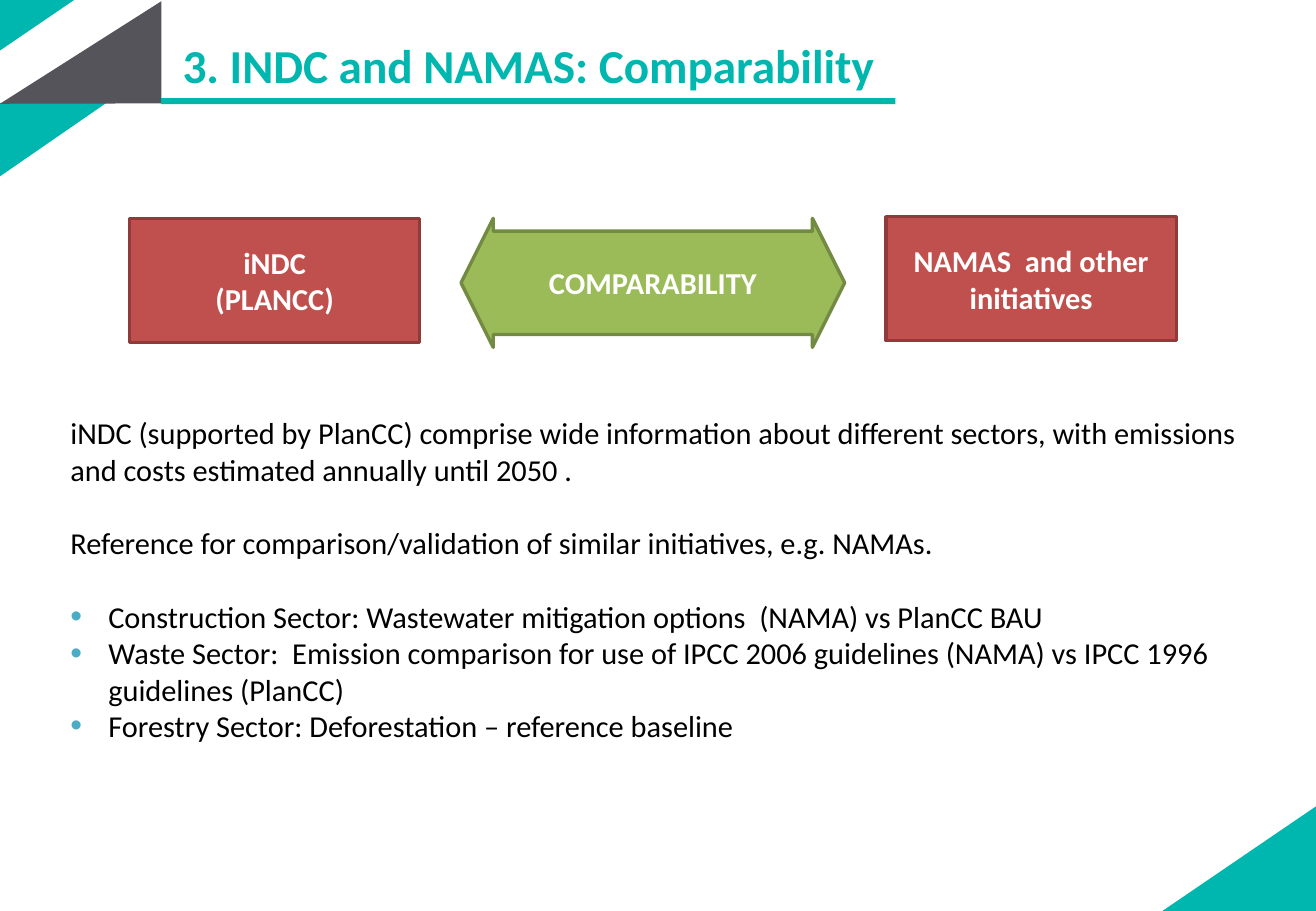
from lxml.etree import SubElement
from pptx import Presentation
from pptx.dml.color import RGBColor
from pptx.enum.shapes import MSO_SHAPE as Kind
from pptx.enum.text import MSO_ANCHOR as Anchor, MSO_AUTO_SIZE as Fit, PP_ALIGN as Align
from pptx.oxml.ns import qn
from pptx.util import Pt

TEAL = RGBColor(0x00, 0xB7, 0xAF)
SLATE = RGBColor(0x56, 0x54, 0x5B)
RED = RGBColor(0xC0, 0x50, 0x4D)
MAROON = RGBColor(0x8E, 0x3B, 0x39)
GREEN = RGBColor(0x9B, 0xBB, 0x59)
OLIVE = RGBColor(0x73, 0x8A, 0x42)
BLUE = RGBColor(0x4B, 0xAC, 0xC6)
WHITE = RGBColor(0xFF, 0xFF, 0xFF)
BLACK = RGBColor(0x00, 0x00, 0x00)

FONT = "Calibri"
WIDE, HIGH = 780, 540


def place(shape, box):
    shape.left, shape.top, shape.width, shape.height = map(Pt, box)


def write(para, text, size, color, bold=False):
    run = para.add_run()
    run.text = text
    font = run.font
    font.name, font.size, font.bold = FONT, Pt(size), bold
    font.color.rgb = color


def paint(shape, fill, edge=None):
    shape.shadow.inherit = False
    shape.fill.solid()
    shape.fill.fore_color.rgb = fill
    if edge is None:
        shape.line.fill.background()
    else:
        shape.line.color.rgb = edge
        shape.line.width = Pt(2)


def wedge(slide, points, fill):
    spots = [(Pt(x), Pt(y)) for x, y in points]
    build = slide.shapes.build_freeform(*spots[0])
    build.add_line_segments(spots[1:], close=True)
    paint(build.convert_to_shape(), fill)


def add_decor(slide, box):
    """Corner triangles, measured from the edges of the box."""
    x, y, w, h = box
    right, base = x + w, y + h
    wedge(slide, [(x, y), (x + 44, y), (x, y + 30)], TEAL)
    wedge(slide, [(x, y + 61), (x + 63, y + 61), (x, y + 104.5)], TEAL)
    wedge(slide, [(right, base - 62), (right, base), (right - 91, base)], TEAL)
    wedge(slide, [(x + 95.7, y + 0.7), (x + 95.7, y + 61.3), (x, y + 61.5)], SLATE)


def add_head(slide, box):
    """Title with a rule below it."""
    x, y, w, h = box
    bar = slide.shapes.add_shape(
        Kind.RECTANGLE, Pt(x - 5.5), Pt(y + h - 0.8), Pt(w + 6.3), Pt(3.6))
    paint(bar, TEAL)

    title = slide.shapes.title
    place(title, box)
    frame = title.text_frame
    frame.word_wrap = False
    frame.auto_size = Fit.NONE
    frame.vertical_anchor = Anchor.TOP
    para = frame.paragraphs[0]
    para.alignment = Align.LEFT
    write(para, "3. INDC and NAMAS: Comparability", 28, TEAL, True)


def add_block(slide, kind, box, fill, edge, lines):
    shape = slide.shapes.add_shape(kind, *map(Pt, box))
    paint(shape, fill, edge)
    frame = shape.text_frame
    frame.word_wrap = True
    frame.vertical_anchor = Anchor.MIDDLE
    for i, text in enumerate(lines):
        para = frame.add_paragraph() if i else frame.paragraphs[0]
        para.alignment = Align.CENTER
        write(para, text, 18, WHITE, True)
    return shape


def add_flow(slide, box):
    """Two red boxes with a double arrow between them."""
    x, y, w, h = box
    side, gap = 172, 24.5
    add_block(slide, Kind.RECTANGLE, (x, y + 1, side, h), RED, MAROON,
              ["iNDC", "(PLANCC)"])
    add_block(slide, Kind.RECTANGLE, (x + w - side, y, side, h), RED, MAROON,
              ["NAMAS  and other initiatives"])
    span = w - 2 * (side + gap)
    arrow = add_block(slide, Kind.LEFT_RIGHT_ARROW,
                      (x + side + gap, y + 1, span, h + 3), GREEN, OLIVE,
                      ["COMPARABILITY"])
    arrow.adjustments[0] = 0.8
    arrow.adjustments[1] = 0.25


def set_mark(para, dot):
    """Turn the bullet on or off, with its indent."""
    props = para._p.get_or_add_pPr()
    indent = Pt(22.5) if dot else 0
    props.set("marL", str(indent))
    props.set("indent", str(-indent))
    if not dot:
        SubElement(props, qn("a:buNone"))
        return
    color = SubElement(props, qn("a:buClr"))
    SubElement(color, qn("a:srgbClr")).set("val", str(BLUE))
    SubElement(props, qn("a:buSzPct")).set("val", "110000")
    SubElement(props, qn("a:buFont")).set("typeface", "Arial")
    SubElement(props, qn("a:buChar")).set("char", "•")


def add_body(slide, box):
    """Two statements, then the sector list."""
    items = [
        (False, "iNDC (supported by PlanCC) comprise wide information about different "
                "sectors, with emissions and costs estimated annually until 2050 ."),
        (False, "Reference for comparison/validation of similar initiatives, e.g. NAMAs."),
        (True, "Construction Sector: Wastewater mitigation options  (NAMA) vs PlanCC BAU"),
        (True, "Waste Sector:  Emission comparison for use of IPCC 2006 guidelines "
               "(NAMA) vs IPCC 1996 guidelines (PlanCC)"),
        (True, "Forestry Sector: Deforestation – reference baseline"),
    ]
    body = slide.placeholders[1]
    place(body, box)
    frame = body.text_frame
    frame.word_wrap = True
    frame.auto_size = Fit.NONE
    frame.vertical_anchor = Anchor.TOP
    for i, (dot, text) in enumerate(items):
        para = frame.add_paragraph() if i else frame.paragraphs[0]
        para.alignment = Align.LEFT
        para.space_before = Pt(0)
        para.space_after = Pt(0 if dot else 22)
        set_mark(para, dot)
        write(para, text, 18, BLACK)


def main():
    deck = Presentation()
    deck.slide_width, deck.slide_height = Pt(WIDE), Pt(HIGH)
    slide = deck.slides.add_slide(deck.slide_layouts[1])
    add_decor(slide, (0, 0, WIDE, HIGH))
    add_head(slide, (101, 18, 429, 41))
    add_flow(slide, (76.8, 128.4, 620.4, 73.5))
    add_body(slide, (34.5, 242, 706.5, 225))
    deck.save("out.pptx")


if __name__ == "__main__":
    main()
